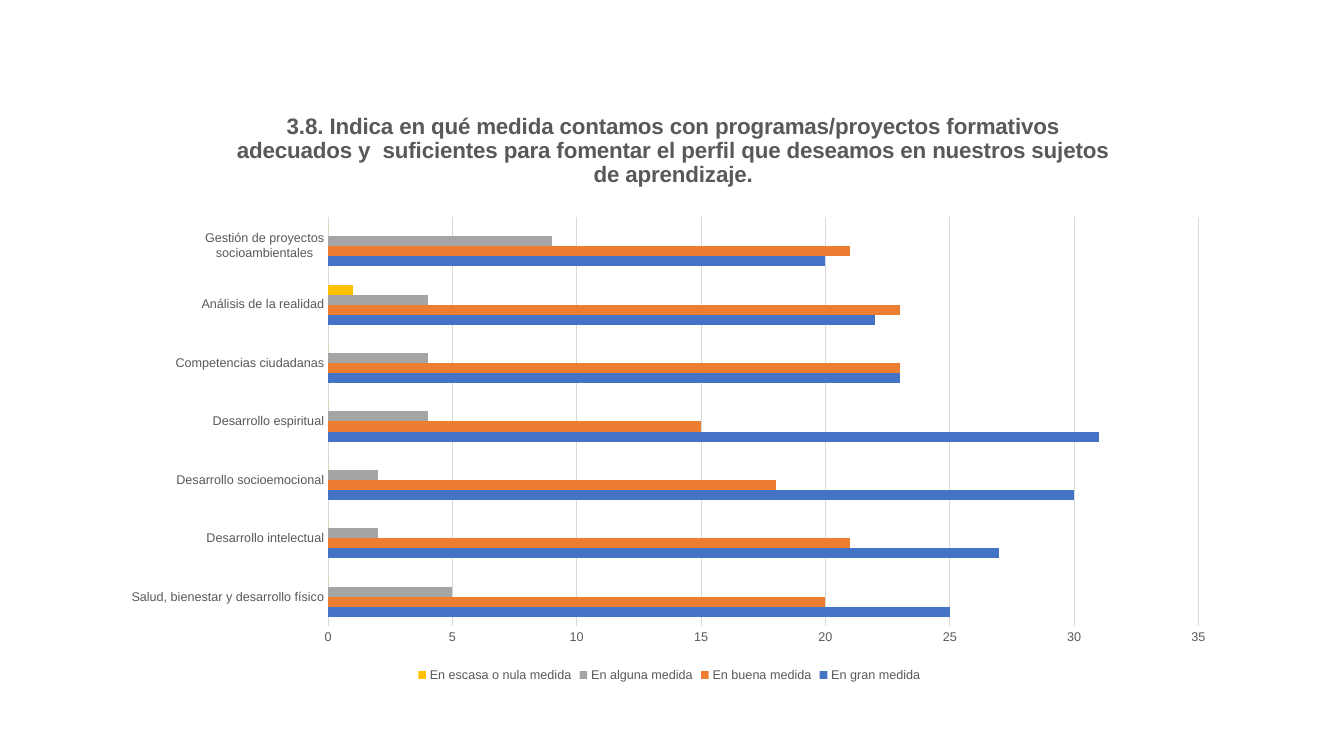
from lxml import etree
from pptx import Presentation
from pptx.chart.data import CategoryChartData
from pptx.dml.color import RGBColor
from pptx.enum.chart import XL_CHART_TYPE as ChartType
from pptx.enum.chart import XL_LEGEND_POSITION as LegendPosition
from pptx.enum.chart import XL_TICK_MARK as TickMark
from pptx.oxml.ns import qn
from pptx.util import Pt

FONT = "Arial"
BLACK = RGBColor(0x00, 0x00, 0x00)
GREY_TEXT = RGBColor(0x59, 0x59, 0x59)
GRID_GREY = RGBColor(0xD9, 0xD9, 0xD9)
BLUE = RGBColor(0x44, 0x72, 0xC4)
ORANGE = RGBColor(0xED, 0x7D, 0x31)
GREY = RGBColor(0xA5, 0xA5, 0xA5)
YELLOW = RGBColor(0xFF, 0xC0, 0x00)

QUESTION = (
    "3.8. Indica en qué medida contamos con programas/proyectos "
    "formativos adecuados y  suficientes para fomentar el perfil que "
    "deseamos en nuestros sujetos de aprendizaje."
)
PROFILE_AREAS = [
    "Salud, bienestar y desarrollo físico",
    "Desarrollo intelectual",
    "Desarrollo socioemocional",
    "Desarrollo espiritual",
    "Competencias ciudadanas",
    "Análisis de la realidad",
    "Gestión de proyectos socioambientales",
]
ANSWERS = [
    ("En gran medida", BLUE, [25, 27, 30, 31, 23, 22, 20]),
    ("En buena medida", ORANGE, [20, 21, 18, 15, 23, 23, 21]),
    ("En alguna medida", GREY, [5, 2, 2, 4, 4, 4, 9]),
    ("En escasa o nula medida", YELLOW, [0, 0, 0, 0, 0, 1, 0]),
]


def style_font(font, size, color, bold=False):
    font.name = FONT
    font.size = Pt(size)
    font.bold = bold
    font.color.rgb = color


def style_line(line):
    line.color.rgb = GRID_GREY
    line.width = Pt(0.75)


def place(part, index, **settings):
    """Give a chart part a manual layout, in fractions of the chart."""
    for automatic in part.findall(qn("c:layout")):
        part.remove(automatic)
    layout = etree.Element(qn("c:layout"))
    manual = etree.SubElement(layout, qn("c:manualLayout"))
    for tag, value in settings.items():
        etree.SubElement(manual, qn(f"c:{tag}")).set("val", str(value))
    part.insert(index, layout)


def add_answers_chart(slide):
    data = CategoryChartData()
    data.categories = PROFILE_AREAS
    for answer, _, counts in ANSWERS:
        data.add_series(answer, counts)
    chart = slide.shapes.add_chart(
        ChartType.BAR_CLUSTERED, Pt(78.5), Pt(72.7), Pt(799.2), Pt(417.6), data
    ).chart
    style_font(chart.font, 10, BLACK)
    return chart


def style_bars(chart):
    bars = chart.plots[0]
    bars.gap_width = 182
    bars.vary_by_categories = False
    for series, (_, color, _) in zip(bars.series, ANSWERS):
        series.format.fill.solid()
        series.format.fill.fore_color.rgb = color
    plot_area = chart.element.find(".//" + qn("c:plotArea"))
    place(plot_area, 0, layoutTarget="inner", xMode="edge", yMode="edge",
          x=0.195, y=0.197, w=0.778, h=0.7)


def style_axes(chart):
    areas, counts = chart.category_axis, chart.value_axis
    for axis in (areas, counts):
        axis.major_tick_mark = TickMark.NONE
        axis.minor_tick_mark = TickMark.NONE
        style_font(axis.tick_labels.font, 9, GREY_TEXT)
    style_line(areas.format.line)
    counts.format.line.fill.background()
    counts.minimum_scale, counts.maximum_scale = 0, 35
    counts.major_unit = 5
    counts.has_major_gridlines = True
    style_line(counts.major_gridlines.format.line)


def add_title(chart):
    chart.has_title = True
    title = chart.chart_title
    question = title.text_frame.paragraphs[0]
    question.text = QUESTION
    style_font(question.font, 16, GREY_TEXT, bold=True)
    place(title.format._element, 1, xMode="edge", yMode="edge", x=0.11, y=0.01)


def add_legend(chart):
    chart.has_legend = True
    chart.legend.position = LegendPosition.BOTTOM
    chart.legend.include_in_layout = False
    style_font(chart.legend.font, 9, GREY_TEXT)


def main():
    deck = Presentation()
    deck.slide_width, deck.slide_height = Pt(960), Pt(540)
    slide = deck.slides.add_slide(deck.slide_layouts[6])

    # Survey chart
    chart = add_answers_chart(slide)
    style_bars(chart)
    style_axes(chart)

    # Question and answer key
    add_title(chart)
    add_legend(chart)

    deck.save("out.pptx")


if __name__ == "__main__":
    main()
